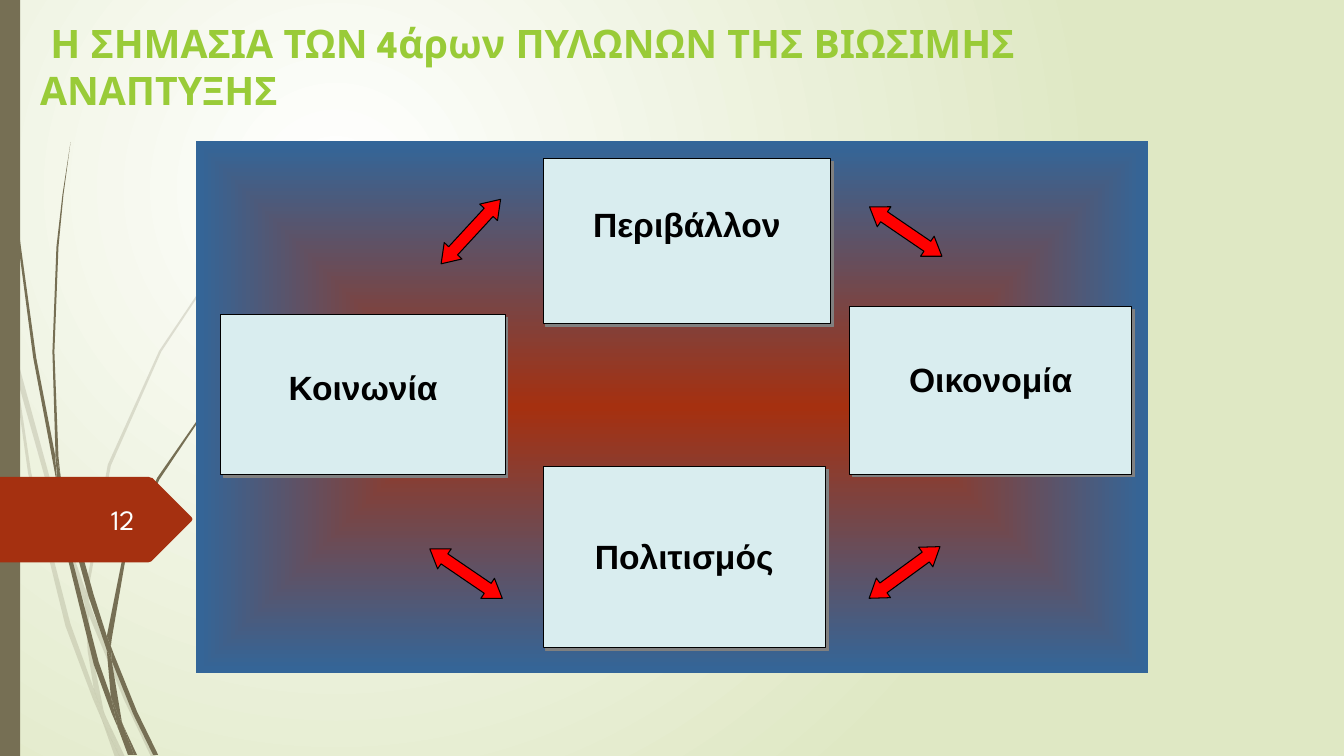
"""Build the slide on the four pillars of sustainable development."""
from typing import NamedTuple

from lxml import etree
from pptx import Presentation
from pptx.dml.color import RGBColor
from pptx.enum.shapes import MSO_SHAPE
from pptx.enum.text import MSO_ANCHOR, PP_ALIGN
from pptx.oxml.ns import qn
from pptx.util import Cm, Pt

RECTANGLE = MSO_SHAPE.RECTANGLE
DOUBLE_ARROW = MSO_SHAPE.LEFT_RIGHT_ARROW
TOP, MIDDLE = MSO_ANCHOR.TOP, MSO_ANCHOR.MIDDLE
LEFT, CENTER, RIGHT = PP_ALIGN.LEFT, PP_ALIGN.CENTER, PP_ALIGN.RIGHT

WHITE = RGBColor(0xFF, 0xFF, 0xFF)
NEAR_WHITE = RGBColor(0xFE, 0xFF, 0xFF)
BLACK = RGBColor(0, 0, 0)
PALE_GREEN = RGBColor(0xDF, 0xE8, 0xC4)
GREEN = RGBColor(0x99, 0xCB, 0x38)
BROWN = RGBColor(0x76, 0x6F, 0x54)
RUST = RGBColor(0xA5, 0x30, 0x10)
BLUE = RGBColor(0x33, 0x66, 0x99)
PALE_BLUE = RGBColor(0xD9, 0xED, 0xEF)
RED = RGBColor(0xFF, 0, 0)
GREY = RGBColor(0x80, 0x80, 0x80)

HEADING_FONT = "League Spartan"
PILLAR_FONT = "Arial"
CM_PER_UNIT = 2.54


class Box(NamedTuple):
    left: float
    top: float
    width: float
    height: float


class Pillar(NamedTuple):
    name: str
    box: Box
    text_inset: float


class Arrow(NamedTuple):
    left: float
    top: float
    rotation: float


PILLARS = [
    Pillar("Οικονομία", Box(21.42, 7.72, 7.1, 4.23), 1.33),
    Pillar("Κοινωνία", Box(5.57, 7.92, 7.16, 4.04), 1.33),
    Pillar("Περιβάλλον", Box(13.69, 3.99, 7.24, 4.16), 1.16),
    Pillar("Πολιτισμός", Box(13.69, 11.76, 7.11, 4.57), 1.75),
]
ARROWS = [
    Arrow(10.64, 14.15, 34.3),
    Arrow(21.69, 14.12, 143.9),
    Arrow(21.72, 5.53, 34.3),
    Arrow(10.76, 5.53, 132.7),
]
PALE_GRASS = [
    [(.11, 3.5), (.09, 3.22), (0, 2.82), (0, 2.99), (.1, 3.44)],
    [(.58, 5.22), (.84, 5.99), (.85, 5.86), (.62, 5.2), (.14, 3.45), (.17, 3.76)],
    [(.92, 6.07), (.88, 5.96), (.88, 6.1), (1.23, 6.94), (1.5, 7.51), (1.55, 7.51),
     (1.27, 6.92)],
    [(1.19, 7.51), (1.24, 7.51), (1.05, 7.11)],
    [(.93, 6.83), (.7, 6.19), (.31, 4.69), (.17, 3.76), (.11, 3.5), (.28, 4.7),
     (.65, 6.21), (.92, 6.93), (1.01, 7.14), (.99, 7.07)],
    [(.84, 5.99), (.87, 6.46), (.93, 6.83), (.96, 6.92), (1.05, 7.11), (1.03, 7.06),
     (.91, 6.46), (.88, 6.1), (.88, 6.08)],
    [(.88, 5.84), (1.1, 4.62), (1.6, 3.49), (2.29, 2.45), (2.68, 1.98), (2.9, 1.75),
     (3.12, 1.54), (3.12, 1.53), (2.89, 1.75), (2.68, 1.97), (2.28, 2.44), (1.58, 3.48),
     (1.07, 4.61), (.85, 5.84), (.85, 5.86), (.88, 5.96)],
    [(1.01, 7.14), (1.14, 7.51), (1.19, 7.51)],
    [(.88, 6.08), (.88, 6.1), (.88, 5.96), (.85, 5.86), (.84, 5.99)],
    [(.96, 6.92), (.93, 6.83), (.99, 7.07), (1.01, 7.14), (1.19, 7.51), (1.05, 7.11)],
]
DARK_GRASS = [
    [(.07, 1.1), (.17, 2.33), (.33, 3.55), (.56, 4.77), (.57, 4.81), (.55, 4.57),
     (.55, 4.53), (.36, 3.55), (.19, 2.32), (.08, 1.09), (.05, .48), (.04, 0), (.03, 0),
     (.04, .48)],
    [(.88, 5.92), (1.06, 6.45), (1.06, 6.33), (1.06, 6.31), (.93, 5.9), (.6, 4.72),
     (.64, 5.05)],
    [(1.13, 6.49), (1.1, 6.41), (1.11, 6.56), (1.32, 7.08), (1.52, 7.49), (1.57, 7.49),
     (1.36, 7.06)],
    [(1.1, 6.91), (.98, 6.57), (.72, 5.56), (.64, 5.05), (.57, 4.77), (.68, 5.57),
     (.93, 6.59), (1.11, 7.08), (1.17, 7.22), (1.16, 7.17)],
    [(.6, 4.72), (.58, 4.53), (.54, 3.49), (.58, 2.45), (.63, 1.93), (.7, 1.41),
     (.62, 1.93), (.56, 2.45), (.52, 3.49), (.55, 4.49)],
    [(1.33, 7.49), (1.36, 7.49), (1.22, 7.19)],
    [(.57, 4.77), (.64, 5.05), (.6, 4.72), (.55, 4.49), (.55, 4.53)],
    [(1.11, 6.33), (1.25, 5.52), (1.58, 4.76), (2.05, 4.06), (2.31, 3.74), (2.45, 3.59),
     (2.61, 3.44), (2.6, 3.44), (2.45, 3.58), (2.31, 3.73), (2.04, 4.05), (1.56, 4.74),
     (1.22, 5.51), (1.06, 6.31), (1.1, 6.41)],
    [(1.17, 7.22), (1.27, 7.49), (1.31, 7.49)],
    [(1.06, 6.45), (1.1, 6.91), (1.16, 7.06), (1.22, 7.19), (1.21, 7.16), (1.11, 6.56),
     (1.09, 6.51)],
    [(1.06, 6.45), (1.09, 6.51), (1.11, 6.56), (1.1, 6.41), (1.06, 6.31), (1.06, 6.33)],
    [(1.16, 7.06), (1.1, 6.91), (1.16, 7.17), (1.17, 7.22), (1.3, 7.49), (1.33, 7.49),
     (1.22, 7.19)],
]
PAGE_TAG = [(1.47, 5.58), (1.5, 5.57), (1.51, 5.56), (1.9, 5.17), (1.91, 5.15), (1.9, 5.13),
            (1.51, 4.74), (1.5, 4.74), (1.47, 4.73), (0, 4.73), (0, 5.58)]


def lengths(box: Box) -> list:
    return [Cm(value) for value in box]


def set_gradient(fill, element, inner: RGBColor, outer: RGBColor, kind: str, focus: Box) -> None:
    fill.gradient()
    for stop, color in zip(fill.gradient_stops, (inner, outer)):
        stop.color.rgb = color
    gradient = element.find(".//" + qn("a:gradFill"))
    for linear in gradient.findall(qn("a:lin")):
        gradient.remove(linear)
    spread = etree.SubElement(gradient, qn("a:path"), path=kind)
    edges = {side: str(percent * 1000) for side, percent in zip("ltrb", focus)}
    etree.SubElement(spread, qn("a:fillToRect"), edges)


def cast_shadow(shape) -> None:
    effects = shape.element.spPr.find(qn("a:effectLst"))
    shadow = etree.SubElement(effects, qn("a:outerShdw"), dist=str(Pt(2.8)),
                              dir="2700000", algn="ctr", rotWithShape="0")
    etree.SubElement(shadow, qn("a:srgbClr"), val=str(GREY))


def paint(shape, fill: RGBColor, outline: RGBColor | None = None, opacity: int = 100) -> None:
    shape.shadow.inherit = False
    shape.fill.solid()
    shape.fill.fore_color.rgb = fill
    if opacity < 100:
        color = shape.element.spPr.find(qn("a:solidFill"))[0]
        etree.SubElement(color, qn("a:alpha"), val=str(opacity * 1000))
    if outline is None:
        shape.line.fill.background()
    else:
        shape.line.color.rgb = outline
        shape.line.width = Pt(0.75)


def write(shape, text: str, *, size: float, font: str, color: RGBColor, bold: bool = False,
          align=LEFT, anchor=MIDDLE, inset: float = 0.13) -> None:
    frame = shape.text_frame
    frame.word_wrap = True
    frame.vertical_anchor = anchor
    frame.margin_top = Cm(inset)
    paragraph = frame.paragraphs[0]
    paragraph.alignment = align
    run = paragraph.add_run()
    run.text = text
    run.font.size, run.font.name, run.font.bold = Pt(size), font, bold
    run.font.color.rgb = color


def draw_outline(slide, nodes: list, color: RGBColor, opacity: int = 100) -> None:
    corners = [(Cm(x * CM_PER_UNIT), Cm(y * CM_PER_UNIT)) for x, y in nodes]
    builder = slide.shapes.build_freeform(*corners[0])
    builder.add_line_segments(corners[1:])
    paint(builder.convert_to_shape(), color, opacity=opacity)


def draw_pillar(slide, pillar: Pillar) -> None:
    card = slide.shapes.add_shape(RECTANGLE, *lengths(pillar.box))
    paint(card, PALE_BLUE, BLACK)
    cast_shadow(card)
    write(card, pillar.name, size=24, font=PILLAR_FONT, color=BLACK, bold=True,
          align=CENTER, anchor=TOP, inset=pillar.text_inset)


def draw_arrow(slide, arrow: Arrow) -> None:
    link = slide.shapes.add_shape(DOUBLE_ARROW, *lengths(Box(arrow.left, arrow.top, 2.21, 0.61)))
    link.adjustments[0], link.adjustments[1] = 0.5, 0.73
    link.rotation = arrow.rotation
    paint(link, RED, BLACK)


def main() -> None:
    deck = Presentation()
    deck.slide_width, deck.slide_height = Cm(33.87), Cm(19.05)
    slide = deck.slides.add_slide(deck.slide_layouts[6])
    set_gradient(slide.background.fill, slide.element, WHITE, PALE_GREEN, "circle",
                 Box(50, 50, 100, 100))
    for blades, opacity in ((PALE_GRASS, 20), (DARK_GRASS, 100)):
        for blade in blades:
            draw_outline(slide, blade, BROWN, opacity)
    side_bar = slide.shapes.add_shape(RECTANGLE, *lengths(Box(0, 0, 0.51, 19.05)))
    paint(side_bar, BROWN)
    draw_outline(slide, PAGE_TAG, RUST)
    panel = slide.shapes.add_shape(RECTANGLE, *lengths(Box(4.94, 3.56, 23.99, 13.41)))
    paint(panel, RUST)
    set_gradient(panel.fill, panel.element, RUST, BLUE, "shape", Box(50, 50, 50, 50))
    for pillar in PILLARS:
        draw_pillar(slide, pillar)
    for arrow in ARROWS:
        draw_arrow(slide, arrow)
    title = slide.shapes.add_textbox(*lengths(Box(0.76, 0.61, 30.1, 2.13)))
    write(title, " Η ΣΗΜΑΣΙΑ ΤΩΝ 4άρων ΠΥΛΩΝΩΝ ΤΗΣ ΒΙΩΣΙΜΗΣ ΑΝΑΠΤΥΞΗΣ", size=28,
          font=HEADING_FONT, color=GREEN, bold=True)
    page_number = slide.shapes.add_textbox(*lengths(Box(1.48, 12.57, 2.16, 1.02)))
    write(page_number, "12", size=20, font=HEADING_FONT, color=NEAR_WHITE, align=RIGHT)
    deck.save("out.pptx")


if __name__ == "__main__":
    main()
